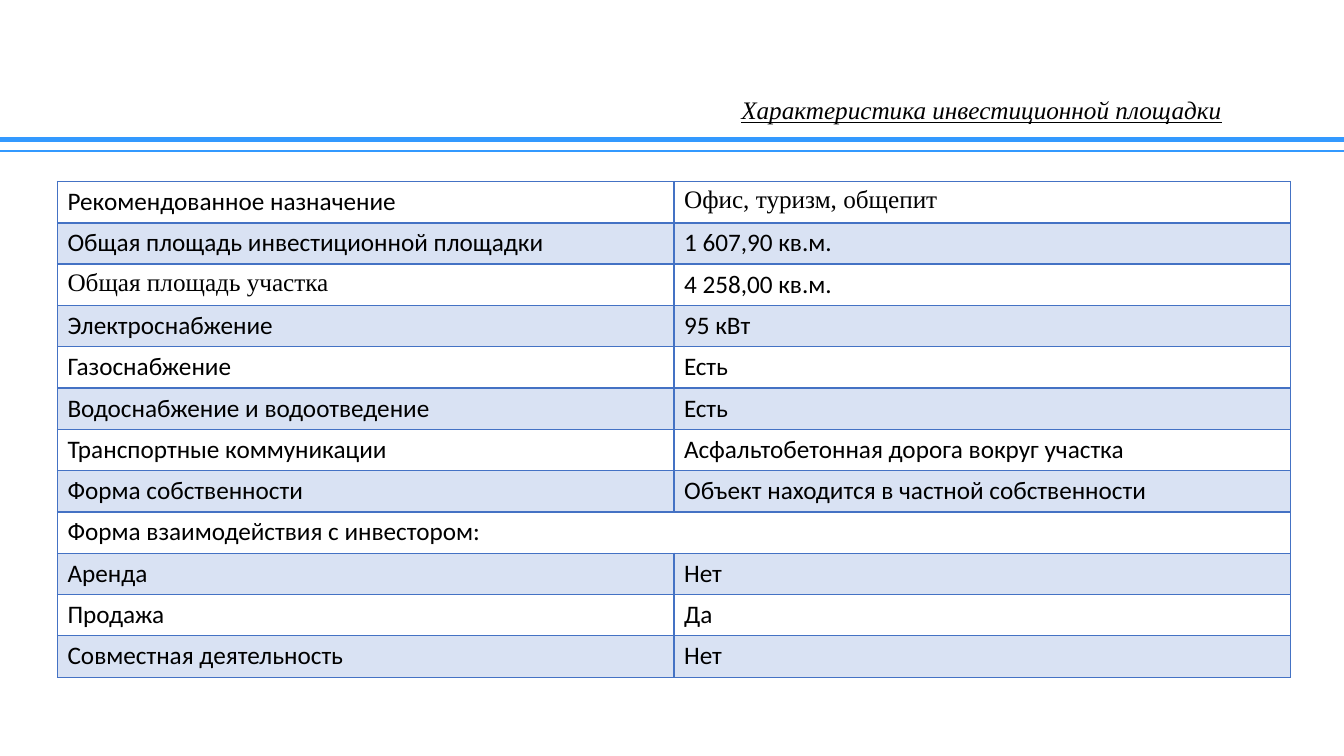
from dataclasses import dataclass

from lxml import etree
from pptx import Presentation
from pptx.dml.color import RGBColor
from pptx.enum import shapes, text
from pptx.oxml import ns
from pptx.util import Inches, Pt


@dataclass(frozen=True)
class Theme:
    ink: str = "000000"
    rule: str = "3399FF"
    grid: str = "4472C4"
    tint: int = 20
    size: int = 18
    sans: str = "Calibri"
    serif: str = "Times New Roman"


THEME = Theme()
TITLE = "Характеристика инвестиционной площадки"
ROWS = [
    ("Рекомендованное назначение", "Офис, туризм, общепит"),
    ("Общая площадь инвестиционной площадки", "1 607,90 кв.м."),
    ("Общая площадь участка", "4 258,00 кв.м."),
    ("Электроснабжение", "95 кВт"),
    ("Газоснабжение", "Есть"),
    ("Водоснабжение и водоотведение", "Есть"),
    ("Транспортные коммуникации", "Асфальтобетонная дорога вокруг участка"),
    ("Форма собственности", "Объект находится в частной собственности"),
    ("Форма взаимодействия с инвестором:",),
    ("Аренда", "Нет"),
    ("Продажа", "Да"),
    ("Совместная деятельность", "Нет"),
]
SERIF = {"Офис, туризм, общепит", "Общая площадь участка"}


def style(font, name):
    font.name = name
    font.size = Pt(THEME.size)
    font.color.rgb = RGBColor.from_string(THEME.ink)


def add_title(slide, left, top, width, height):
    box = slide.shapes.add_textbox(
        Inches(left), Inches(top), Inches(width), Inches(height))
    frame = box.text_frame
    frame.word_wrap = True
    frame.vertical_anchor = text.MSO_ANCHOR.MIDDLE
    para = frame.paragraphs[0]
    para.text = TITLE
    para.alignment = text.PP_ALIGN.CENTER
    para.line_spacing = 0.9
    style(para.font, THEME.serif)
    para.font.italic = True
    para.font.underline = True


def add_rules(slide, left, top, width, gap):
    for row, weight in enumerate((3.5, 1.5)):
        level = Inches(top + row * gap)
        line = slide.shapes.add_connector(
            shapes.MSO_CONNECTOR.STRAIGHT,
            Inches(left), level, Inches(left + width), level)
        line.line.color.rgb = RGBColor.from_string(THEME.rule)
        line.line.width = Pt(weight)
        etree.SubElement(line._element.spPr, ns.qn("a:effectLst"))


def add_edges(cell, top, base):
    props = cell._tc.get_or_add_tcPr()
    weights = {"lnL": 1, "lnR": 1, "lnT": top, "lnB": base}
    for place, (tag, weight) in enumerate(weights.items()):
        edge = etree.Element(ns.qn(f"a:{tag}"), w=str(Pt(weight)))
        fill = etree.SubElement(edge, ns.qn("a:solidFill"))
        etree.SubElement(fill, ns.qn("a:srgbClr"), val=THEME.grid)
        props.insert(place, edge)


def paint(cell, tinted):
    if not tinted:
        cell.fill.background()
        return
    cell.fill.solid()
    cell.fill.fore_color.rgb = RGBColor.from_string(THEME.grid)
    color = cell._tc.tcPr.find(".//" + ns.qn("a:srgbClr"))
    etree.SubElement(color, ns.qn("a:alpha"), val=str(THEME.tint * 1000))


def add_facts(slide, left, top, width, height):
    table = slide.shapes.add_table(
        len(ROWS), 2, Inches(left), Inches(top),
        Inches(width), Inches(height)).table
    table.first_row = False
    table.horz_banding = False
    for row, words in enumerate(ROWS):
        if len(words) == 1:
            table.cell(row, 0).merge(table.cell(row, 1))
        for col in range(2):
            cell = table.cell(row, col)
            paint(cell, row % 2 == 1)
            add_edges(cell, 2 if row == 1 else 1, 2 if row == 0 else 1)
        for col, word in enumerate(words):
            para = table.cell(row, col).text_frame.paragraphs[0]
            para.text = word
            style(para.font, THEME.serif if word in SERIF else THEME.sans)


def main():
    deck = Presentation()
    deck.slide_width = Inches(13.33)
    deck.slide_height = Inches(7.5)
    slide = deck.slides.add_slide(deck.slide_layouts[6])
    add_rules(slide, 0, 1.38, 13.33, 0.12)
    add_title(slide, 6.67, 0.97, 6.13, 0.27)
    add_facts(slide, 0.57, 1.8, 12.23, 4.92)
    deck.save("out.pptx")


if __name__ == "__main__":
    main()
